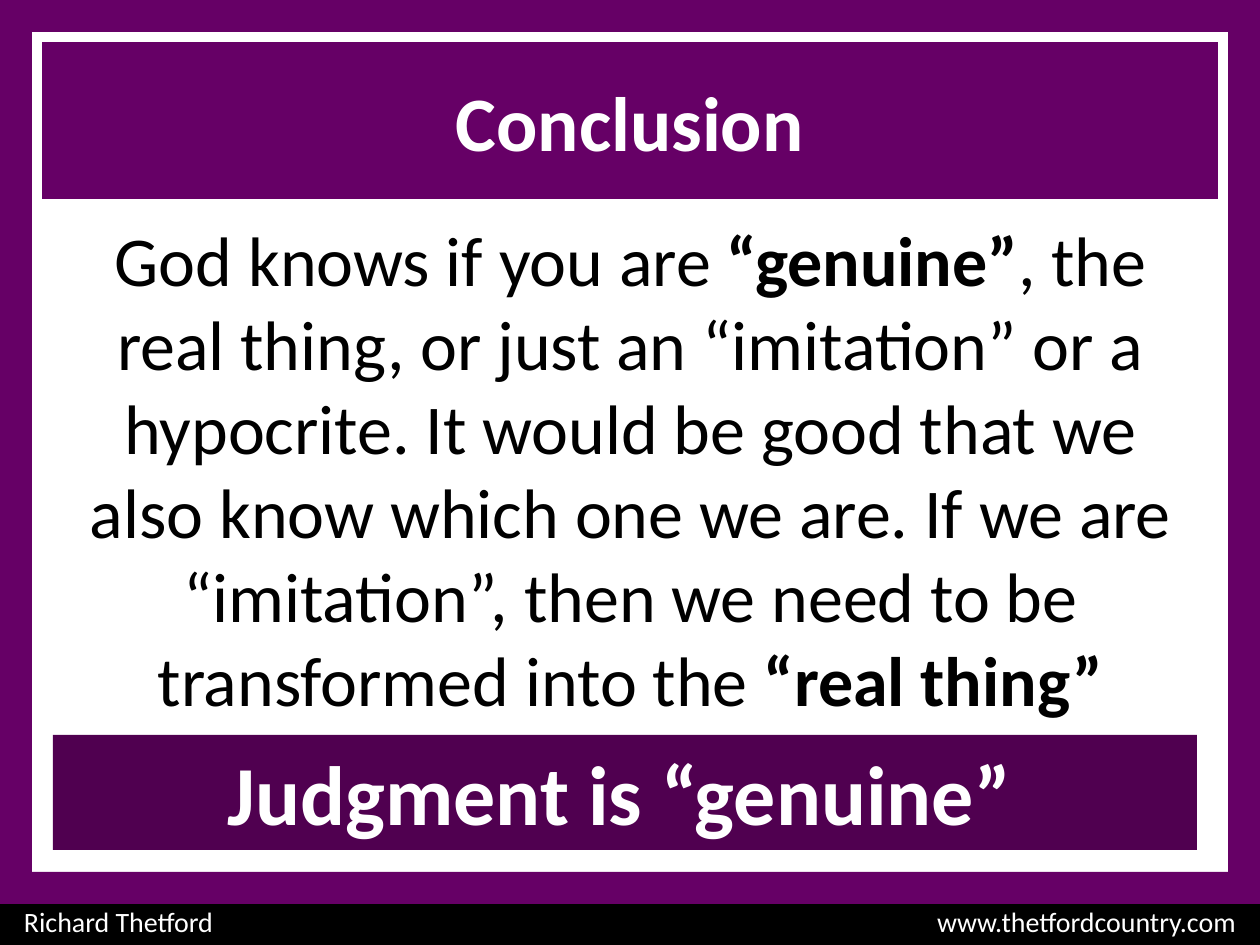
from lxml.etree import SubElement
from pptx import Presentation
from pptx.dml.color import RGBColor as Rgb
from pptx.enum.shapes import MSO_SHAPE as Shape
from pptx.enum.text import MSO_ANCHOR as Anchor, PP_ALIGN as Align
from pptx.oxml.ns import qn
from pptx.util import Pt

SCALE = 914400 / 126
WIDE, HIGH, EDGE = 1260, 945, 32
COLORS = {"purple": "660066", "plum": "500050", "black": "000000", "white": "FFFFFF"}


def emu(px):
    return round(px * SCALE)


def write(frame, runs, size, color="white", font="Calibri", align=Align.CENTER,
          anchor=Anchor.TOP):
    """Fill a frame with one paragraph of (text, bold) runs."""
    frame.word_wrap = True
    frame.vertical_anchor = anchor
    para = frame.paragraphs[0]
    para.alignment = align
    for text, bold in runs:
        run = para.add_run()
        run.text = text
        run.font.name = font
        run.font.size = Pt(size)
        run.font.bold = bold
        run.font.color.rgb = Rgb.from_string(COLORS[color])
    return para


class Deck:
    def __init__(self):
        self.show = Presentation()
        self.show.slide_width, self.show.slide_height = emu(WIDE), emu(HIGH)
        self.slide = self.show.slides.add_slide(self.show.slide_layouts[6])

    def bar(self, box, color):
        shape = self.slide.shapes.add_shape(Shape.RECTANGLE, *map(emu, box))
        shape.shadow.inherit = False
        shape.fill.solid()
        shape.fill.fore_color.rgb = Rgb.from_string(COLORS[color])
        shape.line.fill.background()
        return shape.text_frame

    def label(self, box, runs, size, **style):
        shape = self.slide.shapes.add_textbox(*map(emu, box))
        write(shape.text_frame, runs, size, **style)

    def footer(self, box, left, right, size):
        """Black strip with one text at each end, parted by a right tab."""
        frame = self.bar(box, "black")
        frame.margin_left, frame.margin_right = emu(24), emu(12)
        para = write(frame, [(f"{left}\t{right}", False)], size, align=Align.LEFT)
        props = para._p.get_or_add_pPr()
        tabs = SubElement(props, qn("a:tabLst"))
        SubElement(tabs, qn("a:tab"), pos=str(emu(WIDE - 48)), algn="r")


def main():
    deck = Deck()
    title = deck.bar((42, 42, 1176, 157), "purple")
    write(title, [("Conclusion", True)], 44, anchor=Anchor.MIDDLE)

    deck.footer((0, 898, WIDE, 47), "Richard Thetford", "www.thetfordcountry.com", 16)
    for box in (
        (WIDE - EDGE, 0, EDGE, HIGH - 47),
        (0, 0, EDGE, HIGH - 47),
        (0, 0, WIDE, EDGE),
        (0, 872, WIDE, EDGE),
    ):
        deck.bar(box, "purple")

    deck.label((53, 210, 1155, 522), [
        ("God knows if you are ", False),
        ("“genuine”", True),
        (", the real thing, or just an “imitation” or a hypocrite. "
         "It would be good that we also know which one we are. "
         "If we are “imitation”, then we need to be transformed into the ", False),
        ("“real thing”", True),
    ], 40, color="black")

    deck.bar((53, 735, 1144, 115), "plum")
    deck.label((63, 735, 1113, 115), [("Judgment is “genuine”", True)], 48)
    deck.show.save("out.pptx")


if __name__ == "__main__":
    main()
